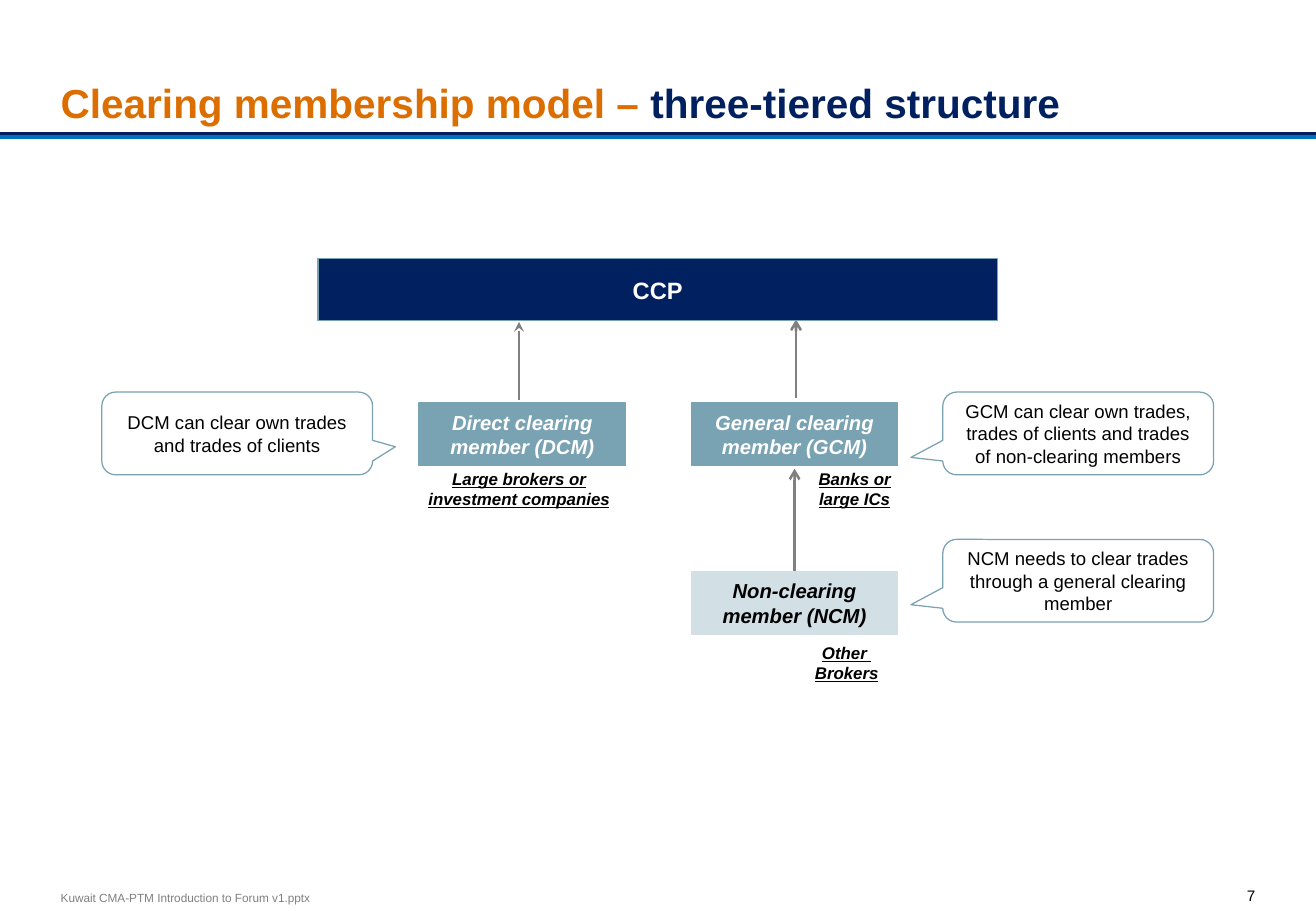
from lxml import etree
from pptx import Presentation
from pptx.dml.color import RGBColor
from pptx.enum.shapes import MSO_CONNECTOR, MSO_SHAPE
from pptx.enum.text import MSO_ANCHOR, PP_ALIGN
from pptx.oxml.ns import qn
from pptx.util import Cm, Pt

NAVY = RGBColor(0x00, 0x20, 0x60)
BLUE = RGBColor(0x00, 0x70, 0xC0)
ORANGE = RGBColor(0xDC, 0x6E, 0x00)
TEAL = RGBColor(0x79, 0xA2, 0xB3)
PALE = RGBColor(0xD2, 0xE0, 0xE6)
GREY = RGBColor(0x80, 0x80, 0x80)
BLACK = RGBColor(0x00, 0x00, 0x00)
WHITE = RGBColor(0xFF, 0xFF, 0xFF)

STRAIGHT = MSO_CONNECTOR.STRAIGHT
RECTANGLE = MSO_SHAPE.RECTANGLE
CALLOUT = MSO_SHAPE.ROUNDED_RECTANGULAR_CALLOUT
LEFT, CENTER, RIGHT = PP_ALIGN.LEFT, PP_ALIGN.CENTER, PP_ALIGN.RIGHT
TOP, MIDDLE, BOTTOM = MSO_ANCHOR.TOP, MSO_ANCHOR.MIDDLE, MSO_ANCHOR.BOTTOM

SLIDE_WIDTH, SLIDE_HEIGHT = 27.51, 19.05
MARGIN = 1.27
BOX_WIDTH, BOX_HEIGHT = 4.32, 1.3
DCM_LEFT, GCM_LEFT = 8.76, 14.45
MEMBER_TOP, NCM_TOP = 8.43, 11.96
LABEL_TOP = 9.8
CALLOUT_RIGHT = 19.71
POINT_LEFT, POINT_RIGHT = (-0.618, 0.29, 0.167), (0.584, 0.161, 0.167)


def set_frame(frame, anchor, inset_x=0, inset_y=0):
    """Set wrapping, anchor and insets of a text frame."""
    frame.word_wrap = True
    frame.vertical_anchor = anchor
    frame.margin_left = frame.margin_right = Cm(inset_x)
    frame.margin_top = frame.margin_bottom = Cm(inset_y)


def add_run(paragraph, text, size, color, bold=False, italic=False, underline=False):
    """Append one formatted run to a paragraph."""
    run = paragraph.add_run()
    run.text = text
    font = run.font
    font.name = "Arial"
    font.size = Pt(size)
    font.color.rgb = color
    font.bold, font.italic, font.underline = bold, italic, underline


def add_text(slide, left, top, width, height, alignment=LEFT, anchor=TOP, inset_y=0):
    """Add an empty text box and return its text frame."""
    box = slide.shapes.add_textbox(Cm(left), Cm(top), Cm(width), Cm(height))
    set_frame(box.text_frame, anchor, inset_y=inset_y)
    box.text_frame.paragraphs[0].alignment = alignment
    return box.text_frame


def add_label(slide, left, top, width, lines):
    """Add an underlined caption below a member box."""
    frame = add_text(slide, left, top, width, 0.86)
    for index, line in enumerate(lines):
        paragraph = frame.add_paragraph() if index else frame.paragraphs[0]
        paragraph.alignment = CENTER
        add_run(paragraph, line, 10, BLACK, True, True, True)


def add_shape(slide, kind, left, top, width, height, fill, line):
    """Add an outlined shape and return it with its centred paragraph."""
    shape = slide.shapes.add_shape(kind, Cm(left), Cm(top), Cm(width), Cm(height))
    shape.shadow.inherit = False
    if fill is None:
        shape.fill.background()
    else:
        shape.fill.solid()
        shape.fill.fore_color.rgb = fill
    shape.line.color.rgb = line
    shape.line.width = Pt(0.75)
    set_frame(shape.text_frame, MIDDLE, 0.25, 0.25)
    paragraph = shape.text_frame.paragraphs[0]
    paragraph.alignment = CENTER
    return shape, paragraph


def add_member(slide, left, top, text, fill, color):
    """Add a clearing member box."""
    _, paragraph = add_shape(
        slide, RECTANGLE, left, top, BOX_WIDTH, BOX_HEIGHT, fill, fill)
    add_run(paragraph, text, 12, color, True, True)


def add_callout(slide, left, top, text, adjustments):
    """Add a speech callout with its pointer placed by the adjustments."""
    shape, paragraph = add_shape(slide, CALLOUT, left, top, 5.66, 1.73, None, TEAL)
    for index, value in enumerate(adjustments):
        shape.adjustments[index] = value
    add_run(paragraph, text, 11, BLACK)


def add_line(slide, start, end, color, width, head=None):
    """Add a straight line, with an arrowhead at its end if one is named."""
    connector = slide.shapes.add_connector(STRAIGHT, *map(Cm, start + end))
    connector.line.color.rgb = color
    connector.line.width = Pt(width)
    if head:
        line = connector.line._get_or_add_ln()
        etree.SubElement(line, qn("a:tailEnd"), type=head)
    etree.SubElement(connector._element.spPr, qn("a:effectLst"))


def add_page_frame(slide):
    """Add the title, the double rule, the footer and the page number."""
    for y, color in ((2.86, BLUE), (2.79, NAVY)):
        add_line(slide, (0, y), (SLIDE_WIDTH, y), color, 2.25)
    title = add_text(slide, MARGIN, 0.46, 24.97, 2.31, LEFT, BOTTOM, 0.13).paragraphs[0]
    add_run(title, "Clearing membership model – ", 24, ORANGE, True)
    add_run(title, "three-tiered structure", 24, NAVY, True)
    footer = add_text(slide, MARGIN, 18.62, 8, 0.3, LEFT, MIDDLE).paragraphs[0]
    add_run(footer, "Kuwait CMA-PTM Introduction to Forum v1.pptx", 7, GREY)
    number = add_text(slide, 25.24, 18.54, 1, 0.36, RIGHT).paragraphs[0]
    add_run(number, "7", 9, BLACK)


def add_structure(slide):
    """Add the three tiers with their arrows, captions and callouts."""
    for x, bottom, top, head in (
        (16.64, 8.33, 6.68, "arrow"),
        (10.85, 8.36, 6.73, "stealth"),
        (16.61, 12.09, 9.8, "arrow"),
    ):
        add_line(slide, (x, bottom), (x, top), GREY, 1.5, head)

    _, paragraph = add_shape(
        slide, RECTANGLE, 6.65, 5.41, 14.2, BOX_HEIGHT, NAVY, TEAL)
    add_run(paragraph, "CCP", 14, WHITE, True)
    add_member(slide, DCM_LEFT, MEMBER_TOP, "Direct clearing member (DCM)", TEAL, WHITE)
    add_member(slide, GCM_LEFT, MEMBER_TOP, "General clearing member (GCM)", TEAL, WHITE)
    add_member(slide, GCM_LEFT, NCM_TOP, "Non-clearing member (NCM)", PALE, BLACK)

    add_label(slide, 8.69, LABEL_TOP, 4.32, ["Large brokers or investment companies"])
    add_label(slide, 16.94, LABEL_TOP, 1.85, ["Banks or large ICs"])
    add_label(slide, 16.61, 13.44, 2.18, ["Other ", "Brokers"])

    add_callout(slide, 2.13, 8.2,
                "DCM can clear own trades and trades of clients", POINT_RIGHT)
    add_callout(slide, CALLOUT_RIGHT, 8.2,
                "GCM can clear own trades, trades of clients and trades "
                "of non-clearing members", POINT_LEFT)
    add_callout(slide, CALLOUT_RIGHT, 11.28,
                "NCM needs to clear trades through a general clearing member",
                POINT_LEFT)


def main():
    """Build the slide and save the presentation."""
    presentation = Presentation()
    presentation.slide_width = Cm(SLIDE_WIDTH)
    presentation.slide_height = Cm(SLIDE_HEIGHT)
    slide = presentation.slides.add_slide(presentation.slide_layouts[6])
    add_page_frame(slide)
    add_structure(slide)
    presentation.save("out.pptx")


if __name__ == "__main__":
    main()
